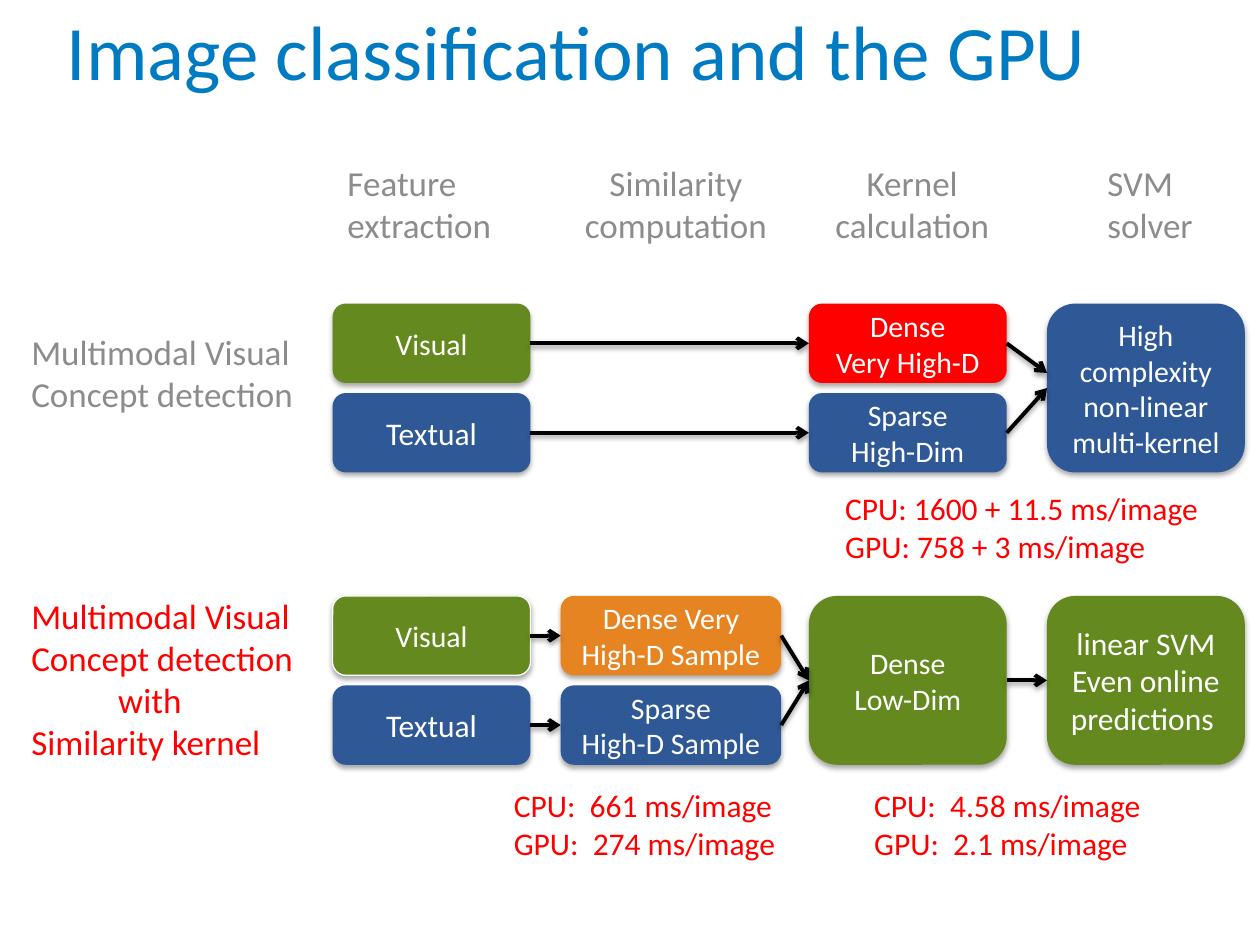
from lxml import etree
from pptx import Presentation
from pptx.dml.color import RGBColor as RGB
from pptx.enum.shapes import MSO_CONNECTOR as LINE, MSO_SHAPE as SHAPE
from pptx.enum.text import MSO_ANCHOR as ANCHOR, MSO_AUTO_SIZE as FIT, PP_ALIGN as ALIGN
from pptx.oxml.ns import qn
from pptx.util import Inches, Pt

FONT = "Calibri"
WHITE = RGB(0xFF, 0xFF, 0xFF)
BLACK = RGB(0, 0, 0)
GRAY = RGB(0x8C, 0x8C, 0x8C)
RED = RGB(0xFF, 0, 0)
GREEN = RGB(0x63, 0x89, 0x1F)
BLUE = RGB(0x2F, 0x58, 0x97)
ORANGE = RGB(0xE6, 0x84, 0x22)
TITLE = RGB(0x00, 0x7B, 0xC2)

# Column lefts, box sizes and row pitch, in inches
FEAT, SIM, KERN, SVM = 2.64, 4.45, 6.42, 8.31
WIDE, BROAD = 1.57, 1.75
LOW, TALL, STEP = 0.63, 1.34, 0.71


def write(frame, lines, size, color, align=ALIGN.LEFT):
    for i, text in enumerate(lines):
        para = frame.paragraphs[0] if i == 0 else frame.add_paragraph()
        para.alignment = align
        run = para.add_run()
        run.text = text
        run.font.name = FONT
        run.font.size = Pt(size)
        run.font.color.rgb = color


def shade(item, alpha, dist):
    """Give a shape or connector a soft shadow that falls straight down."""
    props = item._element.spPr
    for old in props.findall(qn("a:effectLst")):
        props.remove(old)
    fx = etree.SubElement(props, qn("a:effectLst"))
    drop = etree.SubElement(
        fx, qn("a:outerShdw"), blurRad=str(Pt(3.1)), dist=str(Pt(dist)),
        dir="5400000", rotWithShape="0")
    tint = etree.SubElement(drop, qn("a:srgbClr"), val=str(BLACK))
    etree.SubElement(tint, qn("a:alpha"), val=str(alpha * 1000))


def add_box(slide, left, top, width, height, fill, lines, size=17, edge=None):
    box = slide.shapes.add_shape(
        SHAPE.ROUNDED_RECTANGLE, Inches(left), Inches(top), Inches(width), Inches(height))
    box.shadow.inherit = False
    box.fill.solid()
    box.fill.fore_color.rgb = fill
    if edge is None:
        box.line.fill.background()
    else:
        box.line.color.rgb = edge
        box.line.width = Pt(0.75)
    shade(box, 35, 1.8)
    frame = box.text_frame
    frame.word_wrap = True
    frame.vertical_anchor = ANCHOR.MIDDLE
    write(frame, lines, size, WHITE, ALIGN.CENTER)


def add_arrow(slide, x1, y1, x2, y2):
    arrow = slide.shapes.add_connector(
        LINE.STRAIGHT, Inches(x1), Inches(y1), Inches(x2), Inches(y2))
    arrow.line.color.rgb = BLACK
    arrow.line.width = Pt(2.25)
    etree.SubElement(arrow.line._get_or_add_ln(), qn("a:tailEnd"), type="arrow")
    shade(arrow, 38, 1.6)


def add_label(slide, left, top, width, height, lines, size, color, align=ALIGN.LEFT):
    label = slide.shapes.add_textbox(
        Inches(left), Inches(top), Inches(width), Inches(height))
    frame = label.text_frame
    frame.word_wrap = False
    frame.auto_size = FIT.SHAPE_TO_FIT_TEXT
    write(frame, lines, size, color, align)
    return frame


def add_title(slide, left, top, width, height):
    title = slide.shapes.title
    title.left, title.top = Inches(left), Inches(top)
    title.width, title.height = Inches(width), Inches(height)
    frame = title.text_frame
    frame.auto_size = FIT.NONE
    frame.vertical_anchor = ANCHOR.BOTTOM
    write(frame, ["Image classification and the GPU"], 44, TITLE)
    frame.paragraphs[0].line_spacing = Pt(58)


def add_heads(slide, top, height):
    heads = [
        (2.66, 1.57, ["Feature", "extraction"], ALIGN.LEFT),
        (4.53, 1.67, ["Similarity", "computation"], ALIGN.CENTER),
        (6.52, 1.44, ["Kernel", "calculation"], ALIGN.CENTER),
        (8.69, 0.89, ["SVM", "solver"], ALIGN.LEFT),
    ]
    for left, width, lines, align in heads:
        add_label(slide, left, top, width, height, lines, 20, GRAY, align)


def add_inputs(slide, top, edge=None):
    add_box(slide, FEAT, top, WIDE, LOW, GREEN, ["Visual"], edge=edge)
    add_box(slide, FEAT, top + STEP, WIDE, LOW, BLUE, ["Textual"], 18)


def add_direct(slide, top):
    """Upper flow: features go straight to two kernels."""
    add_label(slide, 0.15, top + 0.16, 2.3, 0.77,
              ["Multimodal Visual", "Concept detection"], 20, GRAY)
    add_inputs(slide, top)
    add_box(slide, KERN, top, WIDE, LOW, RED, ["Dense", "Very High-D"])
    add_box(slide, KERN, top + STEP, WIDE, LOW, BLUE, ["Sparse", "High-Dim"])
    add_box(slide, SVM, top, WIDE, TALL, BLUE,
            ["High complexity non-linear", "multi-kernel"])
    for row, end in enumerate((0.55, 0.67)):
        mid = top + row * STEP + LOW / 2
        add_arrow(slide, FEAT + WIDE, mid, KERN, mid)
        add_arrow(slide, KERN + WIDE, mid, SVM, top + end)
    add_label(slide, 6.61, top + 1.42, 3.03, 0.71,
              ["CPU: 1600 + 11.5 ms/image", "GPU: 758 + 3 ms/image"], 18, RED)


def add_kernel(slide, top):
    """Lower flow: similarities are joined in one dense kernel."""
    frame = add_label(
        slide, 0.15, top - 0.06, 2.3, 1.45,
        ["Multimodal Visual", "Concept detection", "with", "Similarity kernel"], 20, RED)
    frame.paragraphs[2]._p.get_or_add_pPr().set("marL", str(Inches(0.69)))
    add_inputs(slide, top, WHITE)
    add_box(slide, SIM, top, BROAD, LOW, ORANGE, ["Dense Very High-D Sample"])
    add_box(slide, SIM, top + STEP, BROAD, LOW, BLUE, ["Sparse", "High-D Sample"])
    add_box(slide, KERN, top, WIDE, TALL, GREEN, ["Dense", "Low-Dim"])
    add_box(slide, SVM, top, WIDE, TALL, GREEN,
            ["linear SVM", "Even online predictions "], 18)
    center = top + TALL / 2
    for row in range(2):
        mid = top + row * STEP + LOW / 2
        add_arrow(slide, FEAT + WIDE, mid, SIM, mid)
        add_arrow(slide, SIM + BROAD, mid, KERN, center)
    add_arrow(slide, KERN + WIDE, center, SVM, center)
    times = [(3.98, 2.36, "661", "274"), (6.84, 2.34, "4.58", "2.1")]
    for left, width, cpu, gpu in times:
        add_label(slide, left, top + 1.46, width, 0.71,
                  [f"CPU:  {cpu} ms/image", f"GPU:  {gpu} ms/image"], 18, RED)


def main():
    deck = Presentation()
    deck.slide_width, deck.slide_height = Inches(10), Inches(7.5)
    slide = deck.slides.add_slide(deck.slide_layouts[5])
    add_title(slide, 0.43, 0.01, 9.13, 0.8)
    add_heads(slide, 1.23, 0.77)
    add_direct(slide, 2.41)
    add_kernel(slide, 4.73)
    deck.save("out.pptx")


if __name__ == "__main__":
    main()
